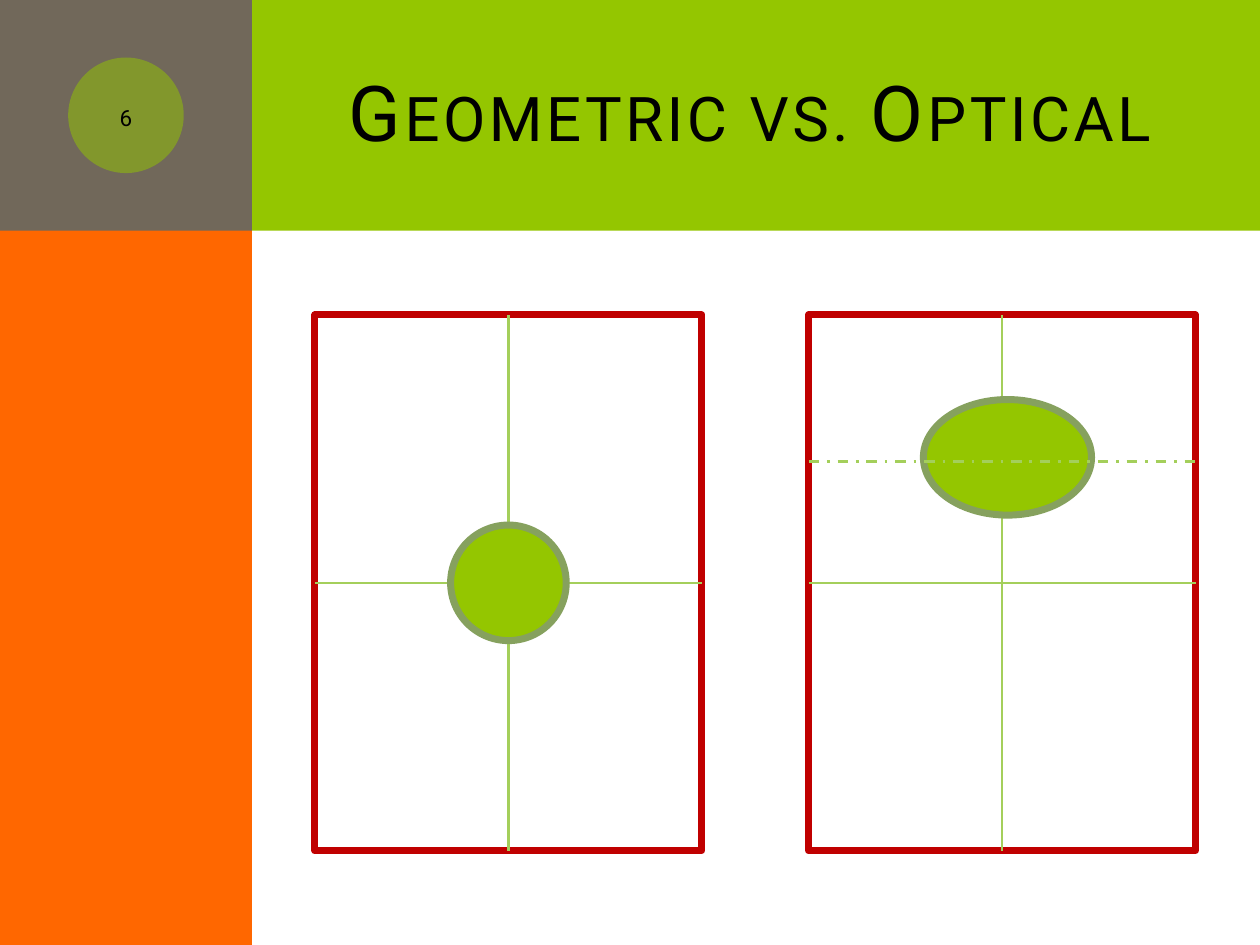
from dataclasses import dataclass

from lxml import etree
from pptx import Presentation
from pptx.dml.color import RGBColor
from pptx.enum.dml import MSO_LINE
from pptx.enum.shapes import MSO_CONNECTOR, MSO_SHAPE
from pptx.enum.text import MSO_ANCHOR, PP_ALIGN
from pptx.oxml.ns import qn
from pptx.util import Cm, Pt

RECTANGLE = MSO_SHAPE.RECTANGLE
OVAL = MSO_SHAPE.OVAL
STRAIGHT = MSO_CONNECTOR.STRAIGHT
DASH_DOT = MSO_LINE.DASH_DOT
MIDDLE = MSO_ANCHOR.MIDDLE
CENTER = PP_ALIGN.CENTER
RIGHT = PP_ALIGN.RIGHT
TOP_SIDE, LEFT_SIDE, BOTTOM_SIDE, RIGHT_SIDE = range(4)


@dataclass(frozen=True)
class Theme:
    font: str = "Roboto"
    title_size: int = 44
    number_size: int = 16
    text: str = "000000"
    green: str = "94C600"
    orange: str = "FF6700"
    taupe: str = "71685A"
    white: str = "FFFFFF"
    frame: str = "C00000"
    axis: str = "A4CF5B"
    center_outline: str = "86A15E"
    outline_width: float = 4
    axis_width: float = 1.5


THEME = Theme()


def add_block(slide, kind, box, fill, outline=None, opacity=None):
    shape = slide.shapes.add_shape(kind, *map(Cm, box))
    shape.shadow.inherit = False
    shape.fill.solid()
    shape.fill.fore_color.rgb = RGBColor.from_string(fill)
    if opacity is not None:
        color = shape.fill._xPr.find(".//" + qn("a:srgbClr"))
        etree.SubElement(color, qn("a:alpha"), val=str(opacity * 1000))
    if outline:
        shape.line.color.rgb = RGBColor.from_string(outline)
        shape.line.width = Pt(THEME.outline_width)
    else:
        shape.line.fill.background()
    return shape


def add_text(slide, box, text, size, align, spacing=0):
    text_box = slide.shapes.add_textbox(*map(Cm, box))
    frame = text_box.text_frame
    frame.word_wrap = True
    frame.vertical_anchor = MIDDLE
    paragraph = frame.paragraphs[0]
    paragraph.alignment = align
    run = paragraph.add_run()
    run.text = text
    run.font.name = THEME.font
    run.font.size = Pt(size)
    run.font.color.rgb = RGBColor.from_string(THEME.text)
    properties = run.font._element
    properties.set("cap", "small")
    if spacing:
        properties.set("spc", str(spacing * 100))


def add_axis(slide, start=(0, 0), end=(0, 0)):
    connector = slide.shapes.add_connector(STRAIGHT, *map(Cm, start + end))
    connector.line.color.rgb = RGBColor.from_string(THEME.axis)
    connector.line.width = Pt(THEME.axis_width)
    etree.SubElement(connector._element.spPr, qn("a:effectLst"))
    return connector


def add_header(slide, box):
    left, top, width, height = box
    inset = 1.27
    add_block(slide, RECTANGLE, (left + inset, top, width - inset, height), THEME.green)


def add_sidebar(slide, box, header_height, number):
    left, top, width, _ = box
    add_block(slide, RECTANGLE, box, THEME.orange)
    add_block(slide, RECTANGLE, (left, top, width, header_height), THEME.taupe)
    diameter = 2.33
    badge = (left + (width - diameter) / 2, top + (header_height - diameter) / 2)
    add_block(slide, OVAL, badge + (diameter, diameter), THEME.green, opacity=50)
    text_width, text_height = 2.12, 1.7
    text_box = (left + (width - text_width) / 2,
                top + (header_height - text_height) / 2, text_width, text_height)
    add_text(slide, text_box, number, THEME.number_size, CENTER)


def add_page(slide, box):
    page = add_block(slide, RECTANGLE, box, THEME.white, THEME.frame)
    for begin, end in ((TOP_SIDE, BOTTOM_SIDE), (LEFT_SIDE, RIGHT_SIDE)):
        axis = add_axis(slide)
        axis.begin_connect(page, begin)
        axis.end_connect(page, end)


def add_center(slide, box, size, shift=(0, 0)):
    left, top, width, height = box
    center_box = (left + (width - size[0]) / 2 + shift[0],
                  top + (height - size[1]) / 2 + shift[1], *size)
    add_block(slide, OVAL, center_box, THEME.green, THEME.center_outline)


def add_geometric_page(slide, box):
    add_page(slide, box)
    add_center(slide, box, (2.33, 2.33))


def add_optical_page(slide, box):
    left, top, width, _ = box
    add_page(slide, box)
    add_center(slide, box, (3.39, 2.33), (0.11, -2.53))
    optical_height = top + 2.96
    axis = add_axis(slide, (left, optical_height), (left + width, optical_height))
    axis.line.dash_style = DASH_DOT


def main():
    presentation = Presentation()
    presentation.slide_width, presentation.slide_height = Cm(25.4), Cm(19.05)
    slide = presentation.slides.add_slide(presentation.slide_layouts[6])
    header_height = 4.65
    add_header(slide, (0, 0, 25.4, header_height))
    add_sidebar(slide, (0, 0, 5.08, 19.05), header_height, "6")
    add_text(slide, (6.78, 0.64, 17.35, 3.18), "Geometric vs. Optical",
             THEME.title_size, RIGHT, spacing=2)
    page_width, page_height = 7.8, 10.8
    for left, add_diagram in ((6.35, add_geometric_page), (16.3, add_optical_page)):
        add_diagram(slide, (left, 6.35, page_width, page_height))
    presentation.save("out.pptx")


if __name__ == "__main__":
    main()
